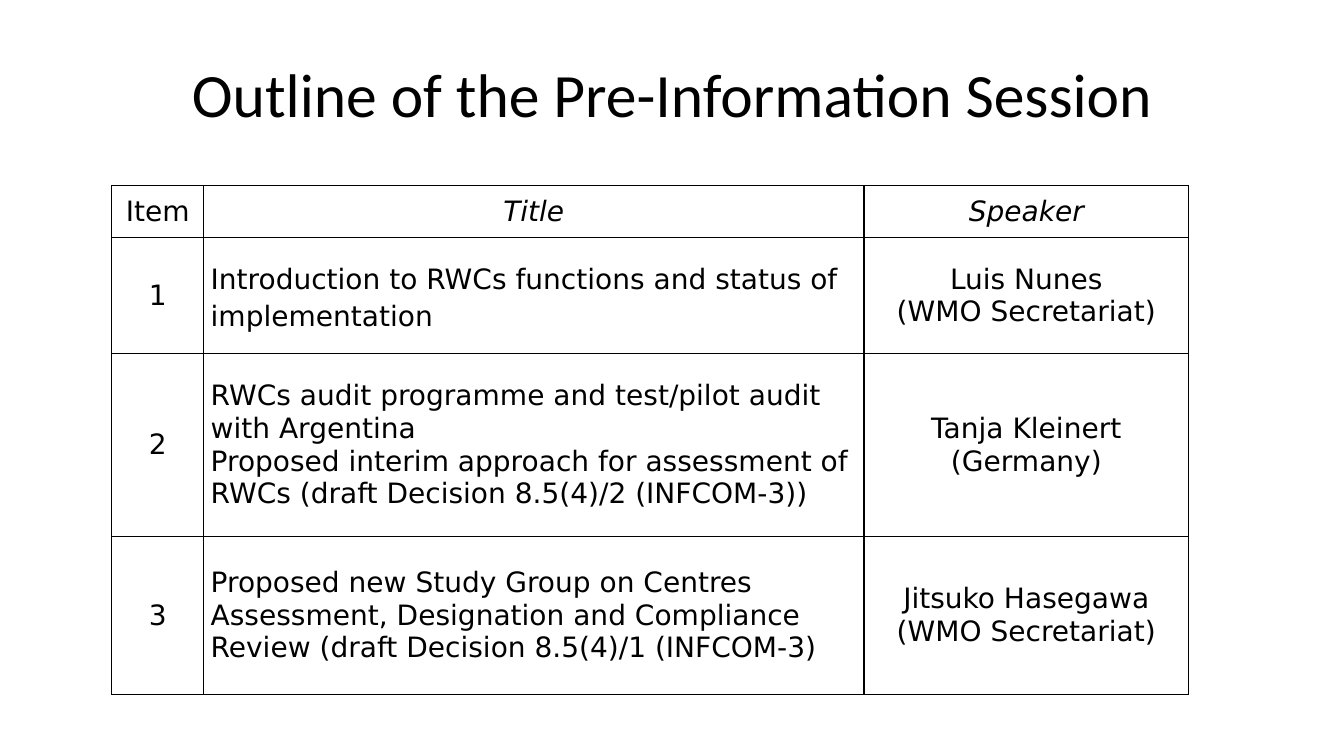
from lxml import etree
from pptx import Presentation
from pptx.dml.color import RGBColor
from pptx.enum.text import MSO_ANCHOR, PP_ALIGN
from pptx.oxml.ns import qn
from pptx.util import Inches, Pt

CENTER, LEFT, MIDDLE = PP_ALIGN.CENTER, PP_ALIGN.LEFT, MSO_ANCHOR.MIDDLE

# Content
HEADING = "Outline of the Pre-Information Session"
AGENDA = [
    ("Item", "Title", "Speaker"),
    ("1", "Introduction to RWCs functions and status of implementation",
     "Luis Nunes\n(WMO Secretariat)"),
    ("2", "RWCs audit programme and test/pilot audit with Argentina\n"
     "Proposed interim approach for assessment of RWCs "
     "(draft Decision 8.5(4)/2 (INFCOM-3))",
     "Tanja Kleinert\n(Germany)"),
    ("3", "Proposed new Study Group on Centres Assessment, Designation and "
     "Compliance Review (draft Decision 8.5(4)/1 (INFCOM-3)",
     "Jitsuko Hasegawa\n(WMO Secretariat)"),
]
COLUMN_WIDTHS = (0.91, 6.55, 3.22)
ROW_HEIGHTS = (0.52, 1.15, 1.81, 1.57)
COLORS = {"ink": "000000", "paper": "FFFFFF"}
INK = RGBColor.from_string(COLORS["ink"])
PAPER = RGBColor.from_string(COLORS["paper"])


def style_font(font, name, size):
    font.name, font.size, font.color.rgb = name, Pt(size), INK


def add_borders(cell):
    properties = cell._tc.get_or_add_tcPr()
    for side in ("a:lnL", "a:lnR", "a:lnT", "a:lnB"):
        line = etree.SubElement(properties, qn(side), w=str(Pt(1)))
        fill = etree.SubElement(line, qn("a:solidFill"))
        etree.SubElement(fill, qn("a:srgbClr"), val=COLORS["ink"])


def fill_cell(cell, text, row, column):
    add_borders(cell)
    cell.fill.solid()
    cell.fill.fore_color.rgb = PAPER
    cell.vertical_anchor = MIDDLE
    cell.margin_left = cell.margin_right = Inches(0.07)
    cell.margin_top = cell.margin_bottom = 0
    cell.text = text
    for paragraph in cell.text_frame.paragraphs:
        paragraph.alignment = LEFT if row and column == 1 else CENTER
        style_font(paragraph.font, "DejaVu Sans", 20)
        if row == 0:
            paragraph.space_after = Pt(2)
            paragraph.font.italic = column > 0
        elif row == 1 and column == 1:
            paragraph.line_spacing = 1.15


prs = Presentation()
prs.slide_width, prs.slide_height = Inches(13.33), Inches(7.5)
slide = prs.slides.add_slide(prs.slide_layouts[5])

# Title
title = slide.shapes.title
title.left, title.top = Inches(0.67), Inches(0.3)
title.width, title.height = Inches(12), Inches(1.25)
title.text_frame.text = HEADING
title.text_frame.vertical_anchor = MIDDLE
title_line = title.text_frame.paragraphs[0]
title_line.alignment = CENTER
style_font(title_line.font, "Calibri", 44)

# Agenda table
agenda = slide.shapes.add_table(
    len(AGENDA), len(COLUMN_WIDTHS), Inches(1.11), Inches(1.84),
    Inches(sum(COLUMN_WIDTHS)), Inches(sum(ROW_HEIGHTS))).table
agenda.first_row = agenda.horz_banding = False
for column, width in zip(agenda.columns, COLUMN_WIDTHS):
    column.width = Inches(width)
for row, height in zip(agenda.rows, ROW_HEIGHTS):
    row.height = Inches(height)
for r, entries in enumerate(AGENDA):
    for c, text in enumerate(entries):
        fill_cell(agenda.cell(r, c), text, r, c)

prs.save("out.pptx")
